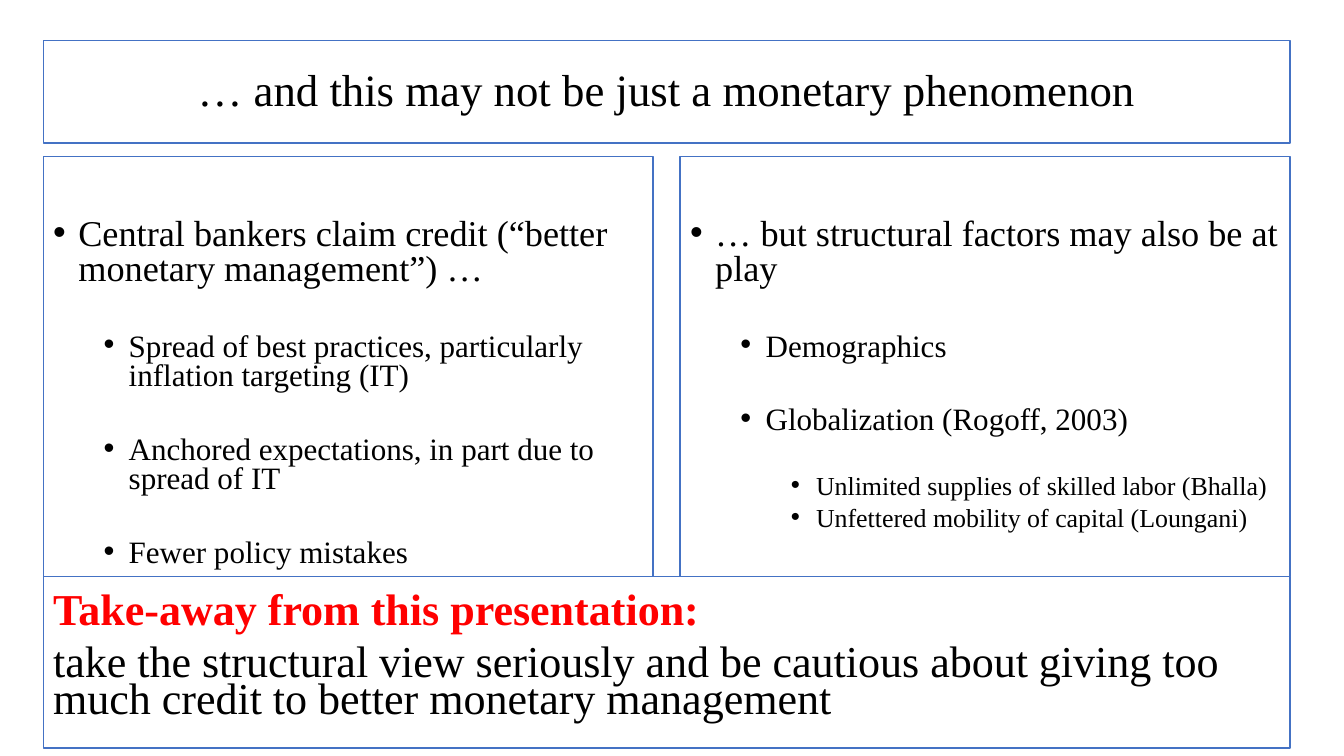
from lxml.etree import SubElement
from pptx import Presentation
from pptx.dml.color import RGBColor
from pptx.enum.shapes import MSO_SHAPE
from pptx.enum.text import MSO_ANCHOR, PP_ALIGN
from pptx.oxml.ns import qn
from pptx.util import Cm, Pt

FONT = "Times New Roman"
BULLET_SIZES = (25.9, 22.2, 18.5)
LEFT, WIDTH, COLUMN_WIDTH = 1.09, 31.42, 15.37
COLUMN_TOP, COLUMN_HEIGHT = 3.94, 10.59

CREDIT_POINTS = [
    (0, 0, "Central bankers claim credit (“better monetary management”) …"),
    (1, 32, "Spread of best practices, particularly inflation targeting (IT)"),
    (1, 31, "Anchored expectations, in part due to spread of IT"),
    (1, 31, "Fewer policy mistakes"),
]
STRUCTURAL_POINTS = [
    (0, 0, "… but structural factors may also be at play"),
    (1, 32, "Demographics"),
    (1, 31, "Globalization (Rogoff, 2003)"),
    (2, 28, "Unlimited supplies of skilled labor (Bhalla)"),
    (2, 5, "Unfettered mobility of capital (Loungani)"),
]


def color(value):
    """Turn a hex string into a colour."""
    return RGBColor.from_string(value)


def add_panel(page, left, top, width, height, anchor):
    """Add a white panel with a blue outline and return its text frame."""
    panel = page.shapes.add_shape(
        MSO_SHAPE.RECTANGLE, Cm(left), Cm(top), Cm(width), Cm(height))
    panel.shadow.inherit = False
    panel.fill.solid()
    panel.fill.fore_color.rgb = color("FFFFFF")
    panel.line.color.rgb = color("4472C4")
    panel.line.width = Pt(1)
    frame = panel.text_frame
    frame.word_wrap = True
    frame.vertical_anchor = anchor
    return frame


def write_paragraph(frame, number, text, size, spacing, before=0,
                    ink="000000", bold=False, align=PP_ALIGN.LEFT):
    """Write one styled paragraph, adding it after the first one."""
    para = frame.add_paragraph() if number else frame.paragraphs[0]
    para.text = text
    para.alignment = align
    para.line_spacing = spacing
    para.space_before = Pt(before)
    para.font.name = FONT
    para.font.size = Pt(size)
    para.font.bold = bold
    para.font.color.rgb = color(ink)
    return para


def add_title(page, left, top, width, height):
    """Place the centred title panel."""
    frame = add_panel(page, left, top, width, height, MSO_ANCHOR.MIDDLE)
    write_paragraph(frame, 0, "… and this may not be just a monetary phenomenon",
                    32, 0.9, align=PP_ALIGN.CENTER)


def add_column(page, left, top, width, height, points):
    """Place a panel of bullets on up to three levels."""
    frame = add_panel(page, left, top, width, height, MSO_ANCHOR.TOP)
    frame.margin_top = Pt(44.5)
    for number, (level, before, text) in enumerate(points):
        para = write_paragraph(frame, number, text, BULLET_SIZES[level], 0.8, before)
        para.level = level
        properties = para._p.get_or_add_pPr()
        properties.set("marL", str(Cm(0.635 + 1.27 * level)))
        properties.set("indent", str(-Cm(0.635)))
        SubElement(properties, qn("a:buFont"), typeface="Arial")
        SubElement(properties, qn("a:buChar"), char="•")
        properties.append(properties.find(qn("a:defRPr")))


def add_takeaway(page, left, top, width, height):
    """Place the closing message panel."""
    frame = add_panel(page, left, top, width, height, MSO_ANCHOR.BOTTOM)
    frame.margin_bottom = Pt(18.5)
    write_paragraph(frame, 0, "Take-away from this presentation:", 31.5, 0.7,
                    ink="FF0000", bold=True)
    write_paragraph(frame, 1, "take the structural view seriously and be cautious "
                    "about giving too much credit to better monetary management",
                    31.5, 0.7, before=10.5)


def main():
    """Build the slide and save the deck."""
    deck = Presentation()
    deck.slide_width, deck.slide_height = Cm(33.87), Cm(19.05)
    page = deck.slides.add_slide(deck.slide_layouts[6])
    add_title(page, LEFT, 1.02, WIDTH, 2.59)
    columns = (CREDIT_POINTS, STRUCTURAL_POINTS)
    for number, points in enumerate(columns):
        left = LEFT + number * (WIDTH - COLUMN_WIDTH)
        add_column(page, left, COLUMN_TOP, COLUMN_WIDTH, COLUMN_HEIGHT, points)
    add_takeaway(page, LEFT, COLUMN_TOP + COLUMN_HEIGHT, WIDTH, 4.32)
    deck.save("out.pptx")


if __name__ == "__main__":
    main()
